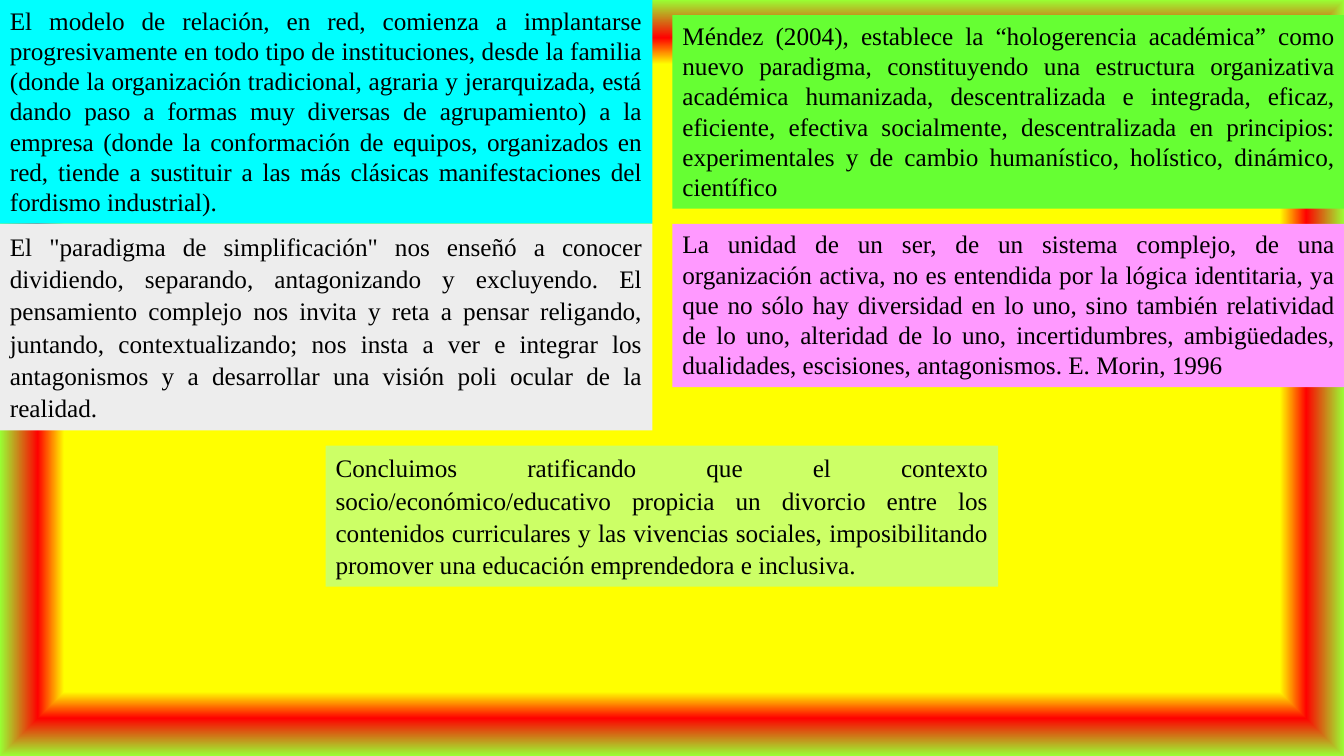
import pptx
import pptx.util
import pptx.dml.color
import pptx.enum.text
import pptx.oxml
import pptx.oxml.ns
from dataclasses import dataclass

Inches = pptx.util.Inches
Color = pptx.dml.color.RGBColor.from_string


@dataclass(frozen=True)
class Theme:
    font: str = "Times New Roman"
    size: int = 18
    ink: str = "000000"
    cyan: str = "00FFFF"
    green: str = "66FF33"
    gray: str = "EDEDED"
    pink: str = "FF99FF"
    lime: str = "CCFF66"
    # Background stops from the center to the edge, in percent
    glow: tuple = ((83, "FFFF00"), (90, "FF0000"), (100, "99FF33"), (100, "66FF33"))


theme = Theme()

# Slide
deck = pptx.Presentation()
deck.slide_width, deck.slide_height = Inches(13.33), Inches(7.5)
slide = deck.slides.add_slide(deck.slide_layouts[6])

# Background: rectangular gradient around the center
slide.background.fill.gradient()
grad = slide.element.find(".//" + pptx.oxml.ns.qn("a:gradFill"))
for part in list(grad):
    grad.remove(part)
space = pptx.oxml.ns.nsdecls("a")
stops = "".join(
    f'<a:gs pos="{pos * 1000}"><a:srgbClr val="{tone}"/></a:gs>' for pos, tone in theme.glow
)
grad.append(pptx.oxml.parse_xml(f"<a:gsLst {space}>{stops}</a:gsLst>"))
grad.append(pptx.oxml.parse_xml(
    f'<a:path {space} path="rect">'
    '<a:fillToRect l="50000" t="50000" r="50000" b="50000"/></a:path>'
))

# Text panels: left, top, width, height, fill, line spacing, text
left, right, row = 0, 6.67, 2.22
slim, wide = 6.47, 6.67
panels = [
    (left, 0, slim, row, theme.cyan, 1.0,
     "El modelo de relación, en red, comienza a implantarse progresivamente en todo tipo de "
     "instituciones, desde la familia (donde la organización tradicional, agraria y "
     "jerarquizada, está dando paso a formas muy diversas de agrupamiento) a la empresa "
     "(donde la conformación de equipos, organizados en red, tiende a sustituir a las más "
     "clásicas manifestaciones del fordismo industrial)."),
    (right, 0.15, wide, 1.92, theme.green, 1.0,
     "Méndez (2004), establece la “hologerencia académica” como nuevo paradigma, "
     "constituyendo una estructura organizativa académica humanizada, descentralizada e "
     "integrada, eficaz, eficiente, efectiva socialmente, descentralizada en principios: "
     "experimentales y de cambio humanístico, holístico, dinámico, científico"),
    (left, row, slim, 2.05, theme.gray, 1.07,
     'El "paradigma de simplificación" nos enseñó a conocer dividiendo, separando, '
     "antagonizando y excluyendo. El pensamiento complejo nos invita y reta a pensar "
     "religando, juntando, contextualizando; nos insta a ver e integrar los antagonismos y "
     "a desarrollar una visión poli ocular de la realidad."),
    (right, row, wide, 1.62, theme.pink, 1.0,
     "La unidad de un ser, de un sistema complejo, de una organización activa, no es "
     "entendida por la lógica identitaria, ya que no sólo hay diversidad en lo uno, sino "
     "también relatividad de lo uno, alteridad de lo uno, incertidumbres, ambigüedades, "
     "dualidades, escisiones, antagonismos. E. Morin, 1996"),
    (3.23, 4.42, wide, 1.4, theme.lime, 1.07,
     "Concluimos ratificando que el contexto socio/económico/educativo propicia un divorcio "
     "entre los contenidos curriculares y las vivencias sociales, imposibilitando promover "
     "una educación emprendedora e inclusiva."),
]
for x, y, width, height, tone, lead, text in panels:
    box = slide.shapes.add_textbox(Inches(x), Inches(y), Inches(width), Inches(height))
    box.fill.solid()
    box.fill.fore_color.rgb = Color(tone)
    frame = box.text_frame
    frame.word_wrap = True
    frame.auto_size = pptx.enum.text.MSO_AUTO_SIZE.SHAPE_TO_FIT_TEXT
    para = frame.paragraphs[0]
    para.alignment = pptx.enum.text.PP_ALIGN.JUSTIFY
    para.line_spacing = lead
    run = para.add_run()
    run.text = text
    run.font.name = theme.font
    run.font.size = pptx.util.Pt(theme.size)
    run.font.color.rgb = Color(theme.ink)

deck.save("out.pptx")
